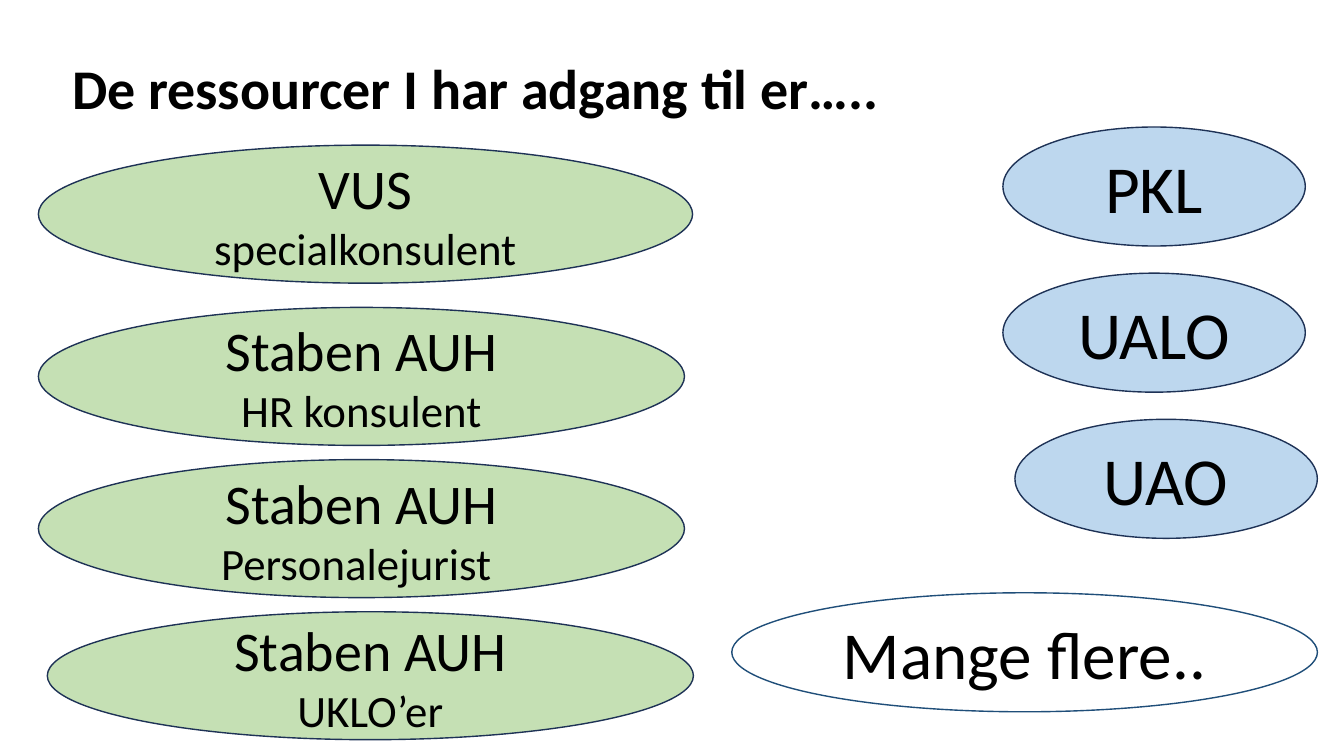
from pptx import Presentation
from pptx.dml.color import RGBColor
from pptx.enum.shapes import MSO_SHAPE as Shape
from pptx.enum.text import MSO_ANCHOR as Anchor, PP_ALIGN as Align
from pptx.util import Pt

FONT = "Calibri"
BLACK, WHITE, NAVY, BLUE_LINE = "000000", "FFFFFF", "1E3256", "1F4E79"
GREEN, BLUE = "C5E0B4", "BDD7EE"

TITLE = "De ressourcer I har adgang til er….."
STAFF = [
    ("VUS\nspecialkonsulent", (27.4, 103.7, 467.3, 98.6)),
    ("Staben AUH\nHR konsulent", (27.4, 219.6, 461.5, 98.6)),
    ("Staben AUH\nPersonalejurist ", (27.4, 328.3, 461.5, 98.6)),
    ("Staben AUH\nUKLO’er", (33.8, 437, 461.5, 91.4)),
]
ROLES = [("PKL", 716.4), ("UALO", 716.4), ("UAO", 725)]
ROLE_TOP, ROLE_STEP, ROLE_WIDTH, ROLE_HEIGHT = 90.7, 104.4, 216, 85
MORE = ("Mange flere..", (522.7, 423.4, 418.3, ROLE_HEIGHT))


def color(value):
    return RGBColor.from_string(value)


def write(box, text, sizes, align, bold=False):
    frame = box.text_frame
    frame.word_wrap = True
    frame.vertical_anchor = Anchor.MIDDLE
    frame.text = text
    for para, size in zip(frame.paragraphs, sizes):
        para.alignment = align
        for span in para.runs:
            span.font.name = FONT
            span.font.size = Pt(size)
            span.font.bold = bold
            span.font.color.rgb = color(BLACK)


def add_ellipse(page, text, place, fill, line, sizes):
    ellipse = page.shapes.add_shape(Shape.OVAL, *map(Pt, place))
    ellipse.shadow.inherit = False
    ellipse.fill.solid()
    ellipse.fill.fore_color.rgb = color(fill)
    ellipse.line.color.rgb = color(line)
    ellipse.line.width = Pt(1)
    write(ellipse, text, sizes, Align.CENTER)


def main():
    deck = Presentation()
    deck.slide_width, deck.slide_height = Pt(960), Pt(540)
    page = deck.slides.add_slide(deck.slide_layouts[6])

    title = page.shapes.add_textbox(Pt(44.6), Pt(13), Pt(828), Pt(104.4))
    write(title, TITLE, [40], Align.LEFT, bold=True)
    title.text_frame.paragraphs[0].line_spacing = 0.9

    for row, (text, left) in enumerate(ROLES):
        place = (left, ROLE_TOP + row * ROLE_STEP, ROLE_WIDTH, ROLE_HEIGHT)
        add_ellipse(page, text, place, BLUE, NAVY, [48])
    for text, place in STAFF:
        add_ellipse(page, text, place, GREEN, NAVY, [40, 32])
    add_ellipse(page, *MORE, WHITE, BLUE_LINE, [48])

    deck.save("out.pptx")


if __name__ == "__main__":
    main()
